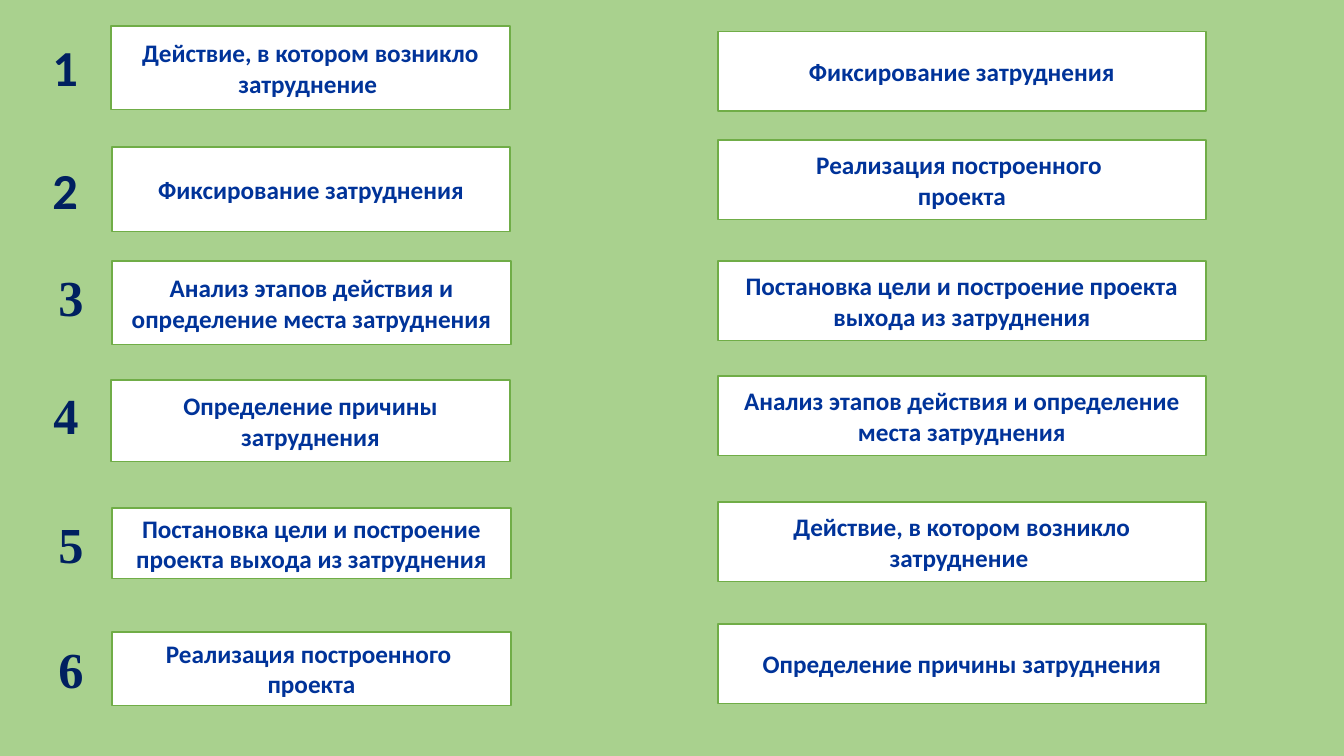
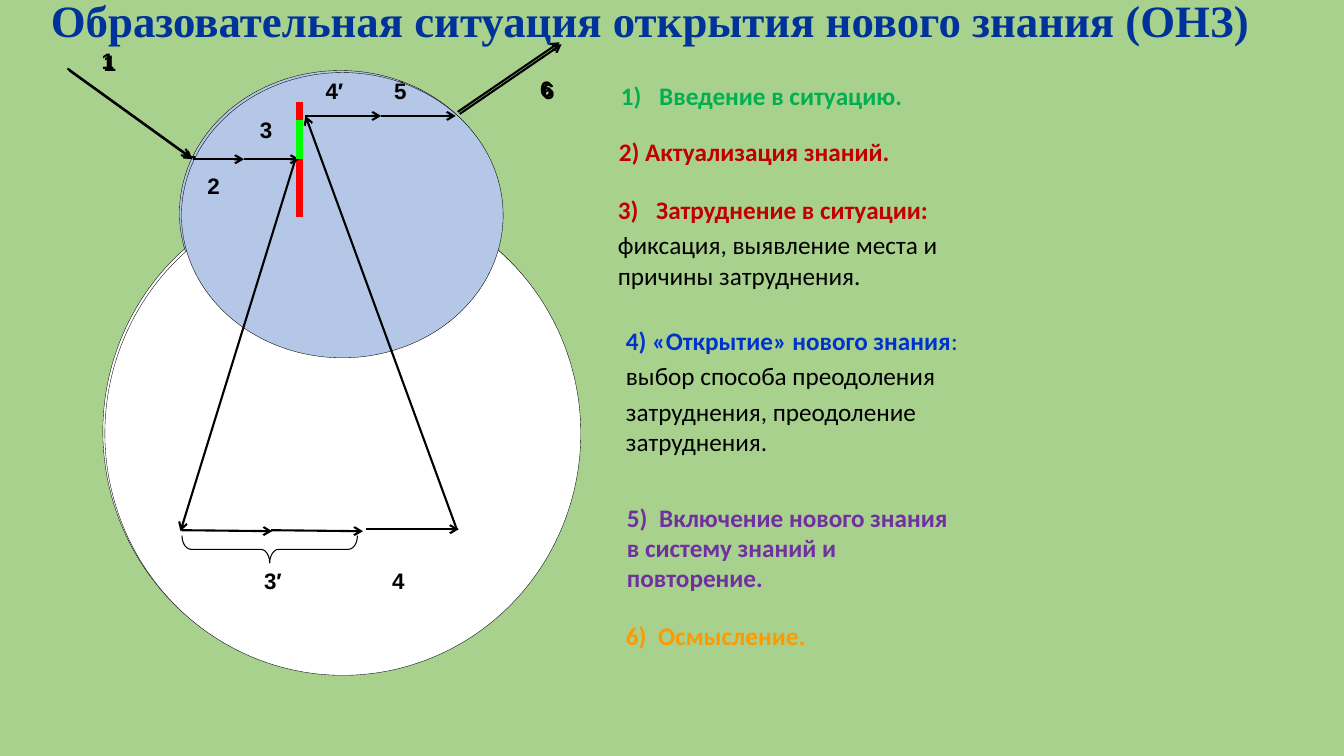
import pptx
import pptx.dml.color
import pptx.enum.shapes
import pptx.enum.text
import pptx.util
import lxml.etree

PX = 9144
DRAWING = "{http://schemas.openxmlformats.org/drawingml/2006/main}"
GREEN, WHITE, BLACK, NAVY, BLUE = "A9D18E", "FFFFFF", "000000", "002060", "003399"
SHAPES = pptx.enum.shapes.MSO_SHAPE
ALIGN = pptx.enum.text.PP_ALIGN
ANCHOR = pptx.enum.text.MSO_ANCHOR


def color(value):
    return pptx.dml.color.RGBColor.from_string(value)


def write(shape, text, size=18, font="Calibri", fill=BLACK, bold=True, align=ALIGN.LEFT,
          after=0, number=None, tab=None, wrap=True, same_paragraph=False):
    frame = shape.text_frame
    frame.word_wrap = wrap
    paragraph = frame.paragraphs[-1]
    if paragraph.runs and not same_paragraph:
        paragraph = frame.add_paragraph()
    paragraph.alignment = align
    paragraph.space_after = pptx.util.Pt(after)
    run = paragraph.add_run()
    run.text = text
    run.font.size = pptx.util.Pt(size)
    run.font.name = font
    run.font.bold = bold
    run.font.color.rgb = color(fill)
    properties = paragraph._p.get_or_add_pPr()
    if number:
        properties.set("marL", str(38 * PX))
        properties.set("indent", str(-38 * PX))
        lxml.etree.SubElement(properties, DRAWING + "buFont", typeface="+mj-lt")
        lxml.etree.SubElement(properties, DRAWING + "buAutoNum", type="arabicParenR", startAt=str(number))
    if tab:
        stops = lxml.etree.SubElement(properties, DRAWING + "tabLst")
        lxml.etree.SubElement(stops, DRAWING + "tab", pos=str(tab * PX), algn="l")


presentation = pptx.Presentation()
presentation.slide_width = 1333 * PX
presentation.slide_height = 750 * PX
background = presentation.slide_master.background.fill
background.solid()
background.fore_color.rgb = color(GREEN)

slide = presentation.slides.add_slide(presentation.slide_layouts[6])

action = ["Действие, в котором возникло затруднение "]
fixing = ["Фиксирование затруднения"]
analysis = ["Анализ этапов действия и определение места затруднения"]
cause = ["Определение причины затруднения"]
goal = ["Постановка цели и построение проекта выхода из затруднения"]
project = ["Реализация построенного ", "проекта"]

steps = [
    (110, 396, 26, 83, action),
    (111, 395, 146, 84, fixing),
    (111, 396, 259, 83, analysis),
    (110, 396, 377, 81, cause),
    (111, 396, 504, 70, goal),
    (111, 396, 627, 73, project),
    (712, 484, 31, 79, fixing),
    (712, 484, 139, 79, project),
    (712, 484, 259, 79, goal),
    (712, 484, 373, 79, analysis),
    (712, 484, 498, 79, action),
    (712, 484, 619, 79, cause),
]
for left, width, top, height, lines in steps:
    box = slide.shapes.add_shape(SHAPES.RECTANGLE, left * PX, top * PX, width * PX, height * PX)
    box.shadow.inherit = False
    box.fill.solid()
    box.fill.fore_color.rgb = color(WHITE)
    box.line.color.rgb = color("70AD47")
    box.line.width = pptx.util.Pt(1)
    box.text_frame.vertical_anchor = ANCHOR.MIDDLE
    for line in lines:
        write(box, line, fill=BLUE, align=ALIGN.CENTER)

numerals = [(42, 31), (42, 153), (48, 259), (43, 376), (48, 504), (48, 628)]
for number, (left, top) in enumerate(numerals, 1):
    label = slide.shapes.add_textbox(left * PX, top * PX, 45 * PX, 71 * PX)
    font = "Calibri" if number < 3 else "Times New Roman"
    write(label, str(number), size=36, font=font, fill=NAVY, wrap=False)

slide = presentation.slides.add_slide(presentation.slide_layouts[5])
title = slide.shapes.title
title.left, title.top, title.width, title.height = 8 * PX, -12 * PX, 1274 * PX, 64 * PX
title.text_frame.auto_size = pptx.enum.text.MSO_AUTO_SIZE.NONE
title.text_frame.vertical_anchor = ANCHOR.TOP
write(title, "Образовательная ситуация открытия нового знания (ОНЗ)", size=32,
      font="Times New Roman", fill=BLUE, align=ALIGN.CENTER)

outlines = [
    (SHAPES.OVAL, 102, 188, 472, 480, WHITE, 0.25),
    (SHAPES.OVAL, 178, 70, 319, 283, "B4C7E7", 0.25),
    (SHAPES.RIGHT_BRACE, 252, 456, 27, 174, None, 0.75),
]
bar_format = (4.5, False)
arrow_format = (1.5, True)
strokes = [
    (295, 99, 295, 213, "FF0000", *bar_format),
    (67, 68, 189, 156, BLACK, *arrow_format),
    (189, 156, 240, 156, BLACK, *arrow_format),
    (240, 156, 295, 156, BLACK, *arrow_format),
    (291, 156, 177, 525, BLACK, *arrow_format),
    (178, 524, 268, 525, BLACK, *arrow_format),
    (267, 524, 358, 525, BLACK, *arrow_format),
    (361, 523, 453, 523, BLACK, *arrow_format),
    (451, 523, 301, 113, BLACK, *arrow_format),
    (301, 113, 376, 113, BLACK, *arrow_format),
    (376, 113, 450, 113, BLACK, *arrow_format),
    (454, 111, 555, 42, BLACK, *arrow_format),
    (295, 117, 295, 156, "00FF00", *bar_format),
]
marks = [
    ("1", 91, 42, 31, 39),
    ("2", 194, 164, 23, 47),
    ("3", 246, 108, 39, 40),
    ("4′", 311, 70, 41, 54),
    ("5", 379, 70, 33, 40),
    ("6", 526, 70, 47, 43),
    ("3′", 250, 556, 41, 54),
    ("4", 377, 556, 60, 54),
]
for shift in (0, 2):
    for kind, left, top, width, height, fill, weight in outlines:
        outline = slide.shapes.add_shape(
            kind, (left + shift) * PX, (top + shift) * PX, width * PX, height * PX)
        outline.shadow.inherit = False
        outline.line.color.rgb = color(BLACK)
        outline.line.width = pptx.util.Pt(weight)
        if fill:
            outline.fill.solid()
            outline.fill.fore_color.rgb = color(fill)
        else:
            outline.fill.background()
            outline.rotation = 90
            outline.adjustments[0] = 0.33

    for start_x, start_y, end_x, end_y, stroke, weight, has_arrow in strokes:
        connector = slide.shapes.add_connector(
            pptx.enum.shapes.MSO_CONNECTOR.STRAIGHT,
            *((value + shift) * PX for value in (start_x, start_y, end_x, end_y)))
        connector.line.color.rgb = color(stroke)
        connector.line.width = pptx.util.Pt(weight)
        properties = connector.element.spPr
        if has_arrow:
            lxml.etree.SubElement(properties.find(DRAWING + "ln"), DRAWING + "tailEnd", type="arrow")
        lxml.etree.SubElement(properties, DRAWING + "effectLst")

    for text, left, top, width, height in marks:
        mark = slide.shapes.add_textbox(
            (left + shift) * PX, (top + shift) * PX, width * PX, height * PX)
        write(mark, text, size=16, font="Arial")

plain = {"bold": False}
stages = [
    (606, 75, 301, 40, False, [("Введение в ситуацию.", {"fill": "00B050", "number": 1})]),
    (604, 130, 291, 40, False, [("2) Актуализация знаний.", {"fill": "C00000"})]),
    (603, 188, 397, 107, True, [
        ("Затруднение в ситуации:", {"fill": "C00000", "number": 3}),
        ("фиксация, выявление места и причины затруднения.", plain),
    ]),
    (611, 318, 390, 143, True, [
        ("4) «Открытие» нового знания", {"fill": "0033CC"}),
        (":", {"fill": "0033CC", "bold": False, "same_paragraph": True}),
        ("выбор способа преодоления", plain),
        ("затруднения, преодоление затруднения.", plain),
    ]),
    (612, 493, 354, 101, True, [
        ("5)\tВключение нового знания в систему знаний и повторение.", {"fill": "7030A0", "tab": 32}),
    ]),
    (611, 611, 200, 40, False, [("6)\tОсмысление.", {"fill": "FF9900", "tab": 32})]),
]
for left, top, width, height, wrap, lines in stages:
    stage = slide.shapes.add_textbox(left * PX, top * PX, width * PX, height * PX)
    for text, text_format in lines:
        write(stage, text, after=3.6, wrap=wrap, **text_format)

presentation.save("out.pptx")
